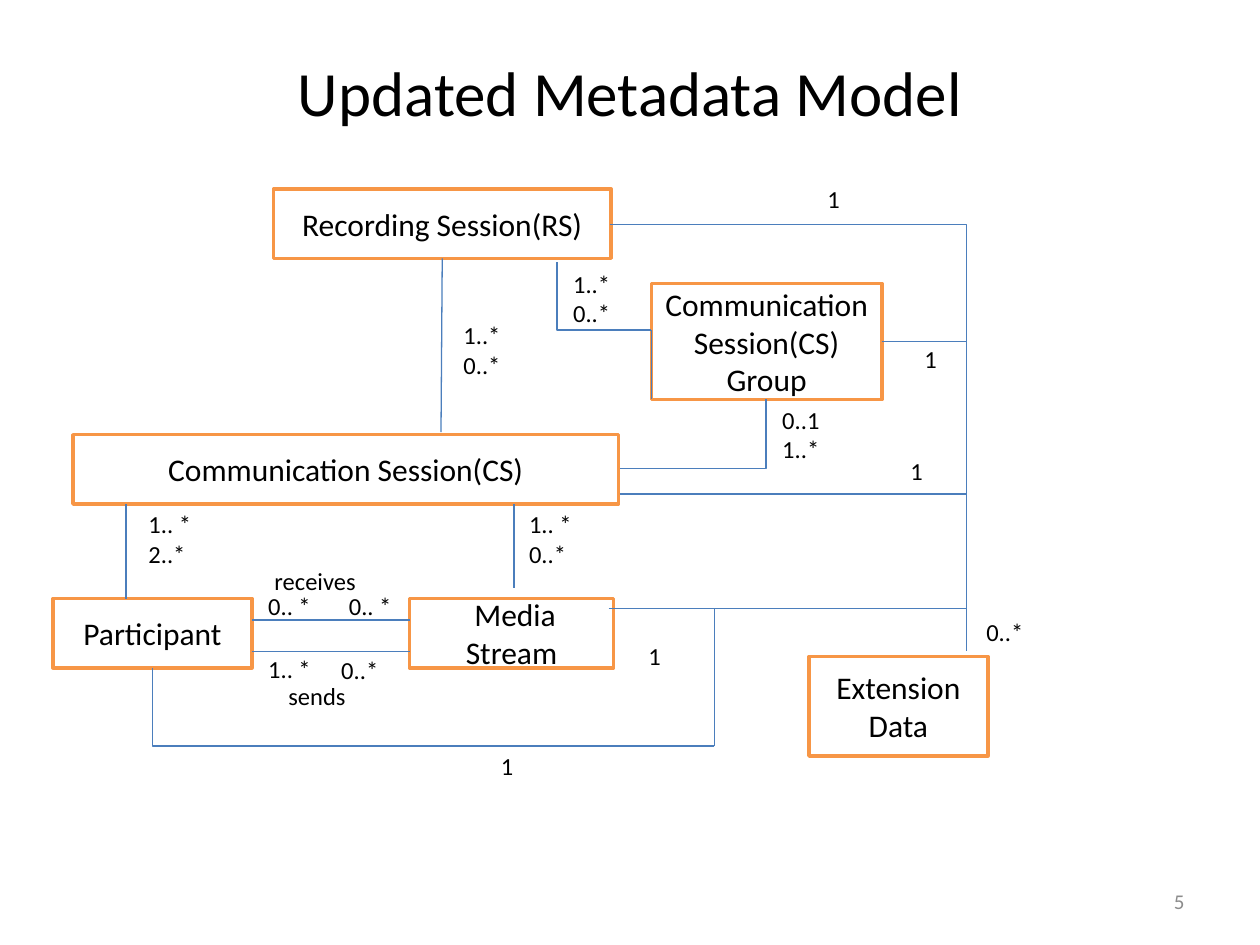
from typing import NamedTuple

from lxml import etree
from pptx import Presentation
from pptx import util as u
from pptx.dml.color import RGBColor
from pptx.enum import shapes, text
from pptx.oxml.ns import qn

HUES = {"ink": "000000", "paper": "FFFFFF", "box": "F79646",
        "link": "4B7EBC", "page": "8C8C8C"}
FONT = "Calibri"
LEFT, MID, RIGHT = text.PP_ALIGN.LEFT, text.PP_ALIGN.CENTER, text.PP_ALIGN.RIGHT
BOX_H = 0.55
TRUNK = 7.67  # vertical line that gathers the links to Extension Data
TAP = 5.67    # vertical line that brings Participant to the trunk


class Box(NamedTuple):
    name: str
    x: float
    y: float
    w: float
    h: float = BOX_H


class Label(NamedTuple):
    words: str
    x: float
    y: float
    w: float = 0.55
    h: float = 0.39
    align: text.PP_ALIGN = LEFT


class Link(NamedTuple):
    x1: float
    y1: float
    x2: float
    y2: float
    bent: bool = False  # a bent link runs across first, then up or down


def one(x: float, y: float) -> Label:
    return Label("1", x, y, 0.39, 0.31, MID)


def role(words: str, x: float, y: float) -> Label:
    return Label(words, x, y, 0.92, 0.31)


def end(words: str, x: float, y: float) -> Label:
    return Label(words, x, y, h=0.23)


RS = Box("Recording Session(RS)", 2.17, 1.5, 2.68)
BOXES = [
    RS,
    Box("Communication Session(CS) Group", 5.17, 2.25, 1.83, 0.92),
    Box(" Media Stream", 3.25, 4.75, 1.62),
    Box("Extension\nData", 6.42, 5.21, 1.42, 0.79),
    Box("Communication Session(CS)", 0.58, 3.45, 4.33),
    Box("Participant", 0.42, 4.75, 1.58),
]
LABELS = [
    role("sends", 2.19, 5.37), role("receives", 2.08, 4.45),
    one(6.42, 1.42), one(7.19, 2.69), one(7.08, 3.58),
    one(5, 5.05), one(3.83, 5.92),
    Label("0..*", 7.7, 4.85, h=0.32, align=MID),
    Label("1.. *\n2..*", 1.08, 4.08), Label("1.. *\n0..*", 4.1, 4.08),
    Label("0..1\n1..*", 6.11, 3.25), Label("1..*\n0..*", 3.58, 2.58),
    Label("1..*\n0..*", 4.45, 2.17),
    end("0.. *", 2.03, 4.69), end("0.. *", 2.67, 4.69),
    end("1.. *", 2.03, 5.19), end("0..*", 2.61, 5.2),
]
LINKS = [
    Link(1, 4, 1, 4.75),                    # CS to Participant
    Link(4.08, 4, 4.08, 4.67),              # CS to Media Stream
    Link(2, 4.92, 3.25, 4.92),              # receives
    Link(2, 5.17, 3.25, 5.17),              # sends
    Link(4.92, 3.72, 6.08, 3.17, True),     # CS to Group
    Link(5.17, 2.62, 4.42, 2.08, True),     # Group to RS
    Link(5.17, 2.62, 5.17, 3.17),
    Link(4.84, 1.78, TRUNK, 5.17, True),    # RS to Extension Data
    Link(7, 2.71, TRUNK, 5.17, True),       # Group to Extension Data
    Link(4.92, 3.92, TRUNK, 3.92),          # CS to trunk
    Link(4.83, 4.83, TRUNK, 4.83),          # Media Stream to trunk
    Link(TAP, 4.83, TAP, 5.92),             # Participant to trunk
    Link(TAP, 5.92, 1.21, 5.3, True),
]


def hue(key: str) -> RGBColor:
    return RGBColor.from_string(HUES[key])


def write(shape, words: str, *, size: float, color: str = "ink", align=MID):
    frame = shape.text_frame
    frame.text = words
    frame.word_wrap = True
    frame.vertical_anchor = text.MSO_ANCHOR.MIDDLE
    for para in frame.paragraphs:
        para.alignment = align
        font = para.font
        font.name, font.size = FONT, u.Pt(size)
        font.color.rgb = hue(color)


def place(shape, x: float, y: float, w: float, h: float):
    shape.left, shape.top = u.Inches(x), u.Inches(y)
    shape.width, shape.height = u.Inches(w), u.Inches(h)


def panel(slide, kind, x: float, y: float, w: float, h: float):
    shape = slide.shapes.add_shape(kind, *map(u.Inches, (x, y, w, h)))
    shape.shadow.inherit = False
    shape.fill.solid()
    shape.fill.fore_color.rgb = hue("paper")
    shape.line.fill.background()
    return shape


def draw_label(slide, tag: Label):
    shape = panel(slide, shapes.MSO_SHAPE.RECTANGLE, tag.x, tag.y, tag.w, tag.h)
    write(shape, tag.words, size=14, align=tag.align)


def draw_box(slide, box: Box):
    shape = panel(slide, shapes.MSO_SHAPE.FLOWCHART_PROCESS,
                  box.x, box.y, box.w, box.h)
    shape.line.color.rgb = hue("box")
    shape.line.width = u.Pt(2)
    write(shape, box.name, size=18)
    return shape


def draw_link(slide, link: Link):
    kind = shapes.MSO_CONNECTOR.ELBOW if link.bent else shapes.MSO_CONNECTOR.STRAIGHT
    wire = slide.shapes.add_connector(kind, *map(u.Inches, link[:4]))
    wire.line.color.rgb = hue("link")
    wire.line.width = u.Pt(0.75)
    props = wire._element.spPr
    etree.SubElement(props, qn("a:effectLst"))
    if link.bent:
        props.find(qn("a:prstGeom")).set("prst", "bentConnector2")
    return wire


def main():
    deck = Presentation()
    deck.slide_width, deck.slide_height = u.Inches(10), u.Inches(7.5)
    slide = deck.slides.add_slide(deck.slide_layouts[5])

    # Title and page number
    title = slide.shapes.title
    place(title, 0.5, 0.3, 9, 0.85)
    write(title, "Updated Metadata Model", size=36)
    page = slide.shapes.add_textbox(*map(u.Inches, (7.17, 6.95, 2.33, 0.4)))
    write(page, "5", size=12, color="page", align=RIGHT)

    # Labels lie under the boxes and links
    for tag in LABELS:
        draw_label(slide, tag)
    drawn = {box.name: draw_box(slide, box) for box in BOXES}
    for link in LINKS:
        draw_link(slide, link)

    # RS to CS starts at the middle of the RS box
    wire = draw_link(slide, Link(3.51, 2.05, 3.5, 3.43))
    wire.begin_connect(drawn[RS.name], 2)

    deck.save("out.pptx")


if __name__ == "__main__":
    main()
